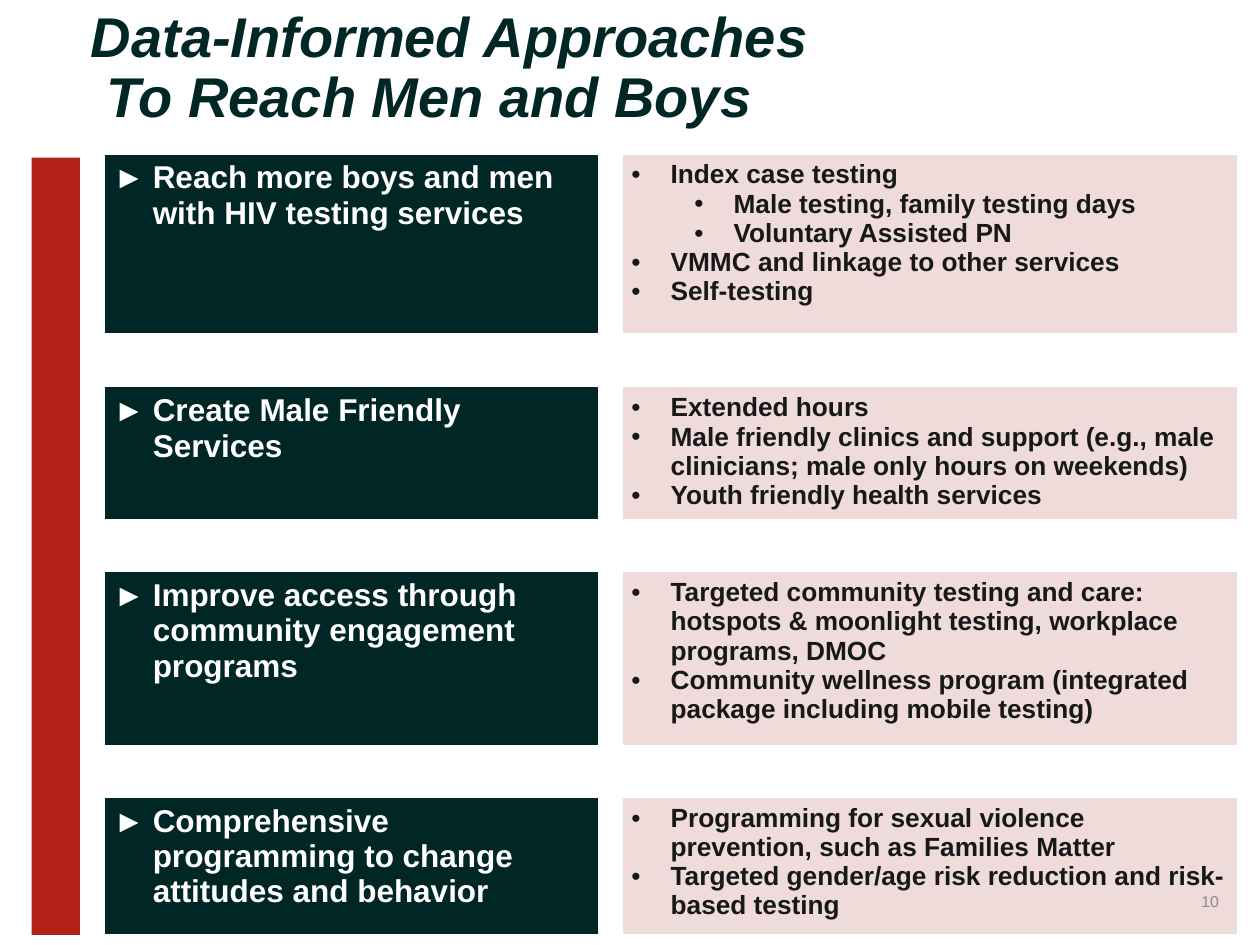
from lxml.etree import SubElement
from pptx import Presentation
from pptx.dml.color import RGBColor
from pptx.enum.shapes import MSO_SHAPE as Shape
from pptx.enum.text import MSO_ANCHOR as Anchor, PP_ALIGN as Align
from pptx.oxml import parse_xml
from pptx.oxml.ns import nsdecls, qn
from pptx.util import Cm, Pt

COLORS = {"dark": "002626", "pale": "F0DBDB", "red": "B22116",
          "ink": "16181A", "gray": "8C8C8C", "white": "FFFFFF"}
FONT = "Arial"
COL_WIDTHS = (9.96, 0.48, 12.4)
GAP_HEIGHT = 0.99
INDENT, LEVEL_STEP = 0.79, 1.27

# Row height, approach, and its actions as (level, text)
APPROACHES = [
    (3.66, "Reach more boys and men with HIV testing services", [
        (0, "Index case testing"),
        (1, "Male testing, family testing days"),
        (1, "Voluntary Assisted PN"),
        (0, "VMMC and linkage to other services"),
        (0, "Self-testing")]),
    (2.69, "Create Male Friendly Services", [
        (0, "Extended hours"),
        (0, "Male friendly clinics and support (e.g., male clinicians; "
            "male only hours on weekends)"),
        (0, "Youth friendly health services")]),
    (3.51, "Improve access through community engagement programs", [
        (0, "Targeted community testing and care: hotspots & moonlight "
            "testing, workplace programs, DMOC"),
        (0, "Community wellness program (integrated package including "
            "mobile testing)")]),
    (2.77, "Comprehensive programming to change attitudes and behavior", [
        (0, "Programming for sexual violence prevention, such as "
            "Families Matter"),
        (0, "Targeted gender/age risk reduction and risk-based testing")]),
]


def rgb(name):
    return RGBColor.from_string(COLORS[name])


def write(p, text, size, color, bold=False, italic=False, align=Align.LEFT,
          bullet=None, level=0, spacing=None):
    p.text = text
    p.alignment, p.level = align, level
    if spacing:
        p.line_spacing = spacing
    for r in p.runs:
        f = r.font
        f.name, f.size, f.bold, f.italic = FONT, Pt(size), bold, italic
        f.color.rgb = rgb(color)
    if bullet:
        pPr = p._p.get_or_add_pPr()
        pPr.set("marL", str(Cm(INDENT + level * LEVEL_STEP)))
        pPr.set("indent", str(-Cm(INDENT)))
        SubElement(pPr, qn("a:buFont")).set("typeface", FONT)
        SubElement(pPr, qn("a:buChar")).set("char", bullet)


def set_insets(box, x, y):
    box.margin_left = box.margin_right = Cm(x)
    box.margin_top = box.margin_bottom = Cm(y)


def add_title(s, x, y, w, h):
    sp = s.shapes.title
    sp.left, sp.top, sp.width, sp.height = Cm(x), Cm(y), Cm(w), Cm(h)
    tf = sp.text_frame
    tf.word_wrap, tf.vertical_anchor = True, Anchor.TOP
    set_insets(tf, 0.33, 0.18)
    write(tf.paragraphs[0], "Data-Informed Approaches\v To Reach Men and Boys",
          32, "dark", bold=True, italic=True, spacing=0.9)


def style_cell(cell, fill, bottom):
    cell.fill.solid()
    cell.fill.fore_color.rgb = rgb(fill)
    set_insets(cell, 0.18, 0.13)
    tcPr = cell._tc.get_or_add_tcPr()
    for i, side in enumerate("LRTB"):
        width = Pt(bottom if side == "B" else 1)
        tcPr.insert(i, parse_xml(
            f'<a:ln{side} {nsdecls("a")} w="{width}"><a:solidFill>'
            f'<a:srgbClr val="{COLORS["white"]}"/></a:solidFill></a:ln{side}>'))


def add_approach_table(s, x, y):
    """Approaches on every other row, with white rows between them."""
    heights = [GAP_HEIGHT] * (2 * len(APPROACHES) - 1)
    heights[::2] = [height for height, _, _ in APPROACHES]
    table = s.shapes.add_table(len(heights), len(COL_WIDTHS), Cm(x), Cm(y),
                               Cm(sum(COL_WIDTHS)), Cm(sum(heights))).table
    table.horz_banding = False
    for col, width in zip(table.columns, COL_WIDTHS):
        col.width = Cm(width)
    for i, (row, height) in enumerate(zip(table.rows, heights)):
        row.height = Cm(height)
        fills = ("white",) * 3 if i % 2 else ("dark", "white", "pale")
        for cell, fill in zip(row.cells, fills):
            style_cell(cell, fill, bottom=1 if i else 3)
    for i, (_, approach, actions) in enumerate(APPROACHES):
        write(table.cell(2 * i, 0).text_frame.paragraphs[0], approach,
              18, "white", bold=True, bullet="►")
        tf = table.cell(2 * i, 2).text_frame
        for j, (level, action) in enumerate(actions):
            p = tf.add_paragraph() if j else tf.paragraphs[0]
            write(p, action, 15, "ink", bold=True, bullet="•", level=level)


def add_page_number(s, x, y, w, h):
    tf = s.shapes.add_textbox(Cm(x), Cm(y), Cm(w), Cm(h)).text_frame
    tf.word_wrap, tf.vertical_anchor = True, Anchor.MIDDLE
    write(tf.paragraphs[0], "10", 9, "gray", align=Align.RIGHT)


def add_side_bar(s, x, y, w, h):
    sp = s.shapes.add_shape(Shape.RECTANGLE, Cm(x), Cm(y), Cm(w), Cm(h))
    sp.shadow.inherit = False
    sp.fill.solid()
    sp.fill.fore_color.rgb = rgb("red")
    sp.line.fill.background()


def main():
    prs = Presentation()
    prs.slide_width, prs.slide_height = Cm(25.4), Cm(19.05)
    s = prs.slides.add_slide(prs.slide_layouts.get_by_name("Title Only"))
    add_title(s, 1.5, 0, 22.86, 3.18)
    add_approach_table(s, 2.11, 3.1)
    add_page_number(s, 19.1, 17.65, 5.72, 1.02)
    add_side_bar(s, 0.64, 3.18, 0.97, 15.67)
    prs.save("out.pptx")


if __name__ == "__main__":
    main()
